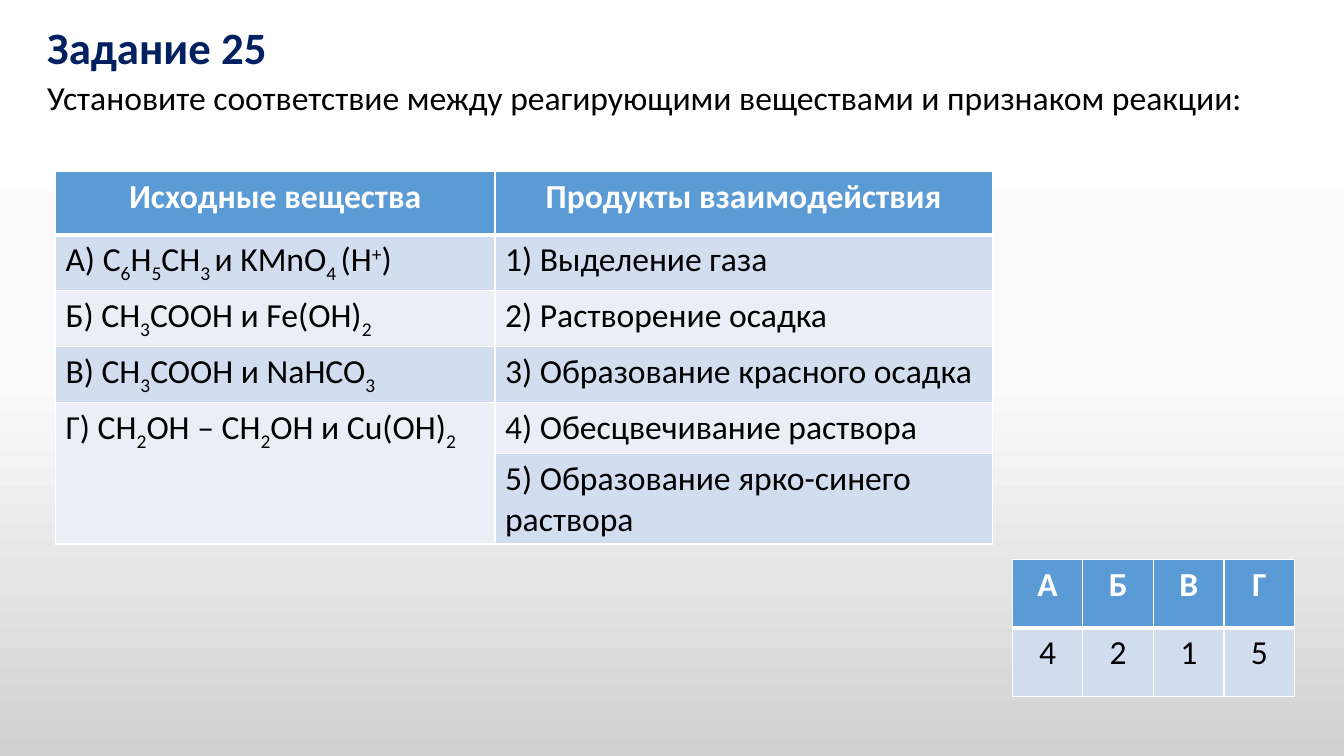
from copy import deepcopy
from dataclasses import dataclass

from lxml import etree
from pptx import Presentation
from pptx.dml.color import RGBColor
from pptx.enum.text import MSO_ANCHOR, PP_ALIGN
from pptx.oxml.ns import qn
from pptx.util import Inches, Pt

LEFT, CENTER = PP_ALIGN.LEFT, PP_ALIGN.CENTER
TOP, MIDDLE = MSO_ANCHOR.TOP, MSO_ANCHOR.MIDDLE

NAVY = RGBColor(0x00, 0x20, 0x60)
BLACK = RGBColor(0x00, 0x00, 0x00)
WHITE = RGBColor(0xFF, 0xFF, 0xFF)
HEADER_BLUE = RGBColor(0x5B, 0x9B, 0xD5)
BAND_DARK = RGBColor(0xD2, 0xDE, 0xEF)
BAND_LIGHT = RGBColor(0xEA, 0xEF, 0xF7)
BACKGROUND = [(0, WHITE), (0.5, RGBColor(0xFB, 0xFB, 0xFB)), (1, RGBColor(0xD1, 0xD1, 0xD1))]

FONT = "Calibri"
INDEX_MARK = "_"
SUBSCRIPT, SUPERSCRIPT = "-25000", "30000"


@dataclass
class Heading:
    text: str
    top: float
    width: float
    height: float
    size: int
    color: RGBColor
    bold: bool
    anchor: MSO_ANCHOR
    spacing: float


@dataclass
class Grid:
    left: float
    top: float
    widths: list[float]
    heights: list[float]
    rows: list[list[str]]
    body_align: PP_ALIGN


HEADINGS = [
    Heading("Задание 25", 0.28, 11.5, 0.43, 32, NAVY, True, MIDDLE, 0.9),
    Heading("Установите соответствие между реагирующими веществами и признаком реакции:",
            0.71, 12.48, 0.5, 24, BLACK, False, TOP, 1.0),
]

REACTIONS = Grid(
    0.55, 1.7, [4.36, 4.93], [0.63, 0.41, 0.54, 0.55, 0.46, 0.43],
    [
        ["Исходные вещества", "Продукты взаимодействия"],
        ["А) C_6_H_5_CH_3 _и KMnO_4 _(H_+_)", "1) Выделение газа"],
        ["Б) CH_3_COOH и Fe(OH)_2_", "2) Растворение осадка"],
        ["В) CH_3_COOH и NaHCO_3_", "3) Образование красного осадка"],
        ["Г) CH_2_OH – CH_2_OH и Cu(OH)_2_", "4) Обесцвечивание раствора"],
        ["", "5) Образование ярко-синего раствора"],
    ],
    LEFT,
)
ANSWERS = Grid(10.04, 5.55, [0.7] * 4, [0.68] * 2, [list("АБВГ"), list("4215")], CENTER)


def add_spans(para, text: str, size: int, color: RGBColor, bold: bool) -> None:
    for position, piece in enumerate(text.split(INDEX_MARK)):
        if not piece:
            continue
        span = para.add_run()
        span.text = piece
        span.font.name = FONT
        span.font.size = Pt(size)
        span.font.bold = bold
        span.font.color.rgb = color
        if position % 2:
            baseline = SUPERSCRIPT if piece == "+" else SUBSCRIPT
            span.font._element.set("baseline", baseline)


def add_heading(page, heading: Heading) -> None:
    box = page.shapes.add_textbox(Inches(0.37), Inches(heading.top),
                                  Inches(heading.width), Inches(heading.height))
    frame = box.text_frame
    frame.word_wrap = True
    frame.vertical_anchor = heading.anchor
    para = frame.paragraphs[0]
    para.line_spacing = heading.spacing
    add_spans(para, heading.text, heading.size, heading.color, heading.bold)


def set_borders(cell, top: int, bottom: int) -> None:
    properties = cell._tc.get_or_add_tcPr()
    sides = [("lnL", 1), ("lnR", 1), ("lnT", top), ("lnB", bottom)]
    for position, (side, points) in enumerate(sides):
        line = etree.Element(qn(f"a:{side}"), w=str(Pt(points)))
        fill = etree.SubElement(line, qn("a:solidFill"))
        etree.SubElement(fill, qn("a:srgbClr"), val=str(WHITE))
        properties.insert(position, line)


def add_grid(page, grid: Grid) -> None:
    table = page.shapes.add_table(
        len(grid.heights), len(grid.widths), Inches(grid.left), Inches(grid.top),
        Inches(sum(grid.widths)), Inches(sum(grid.heights))).table
    for column, width in zip(table.columns, grid.widths):
        column.width = Inches(width)
    for row, height in zip(table.rows, grid.heights):
        row.height = Inches(height)
    for row_index, texts in enumerate(grid.rows):
        header = row_index == 0
        band = BAND_DARK if row_index % 2 else BAND_LIGHT
        for column_index, text in enumerate(texts):
            cell = table.cell(row_index, column_index)
            cell.fill.solid()
            cell.fill.fore_color.rgb = HEADER_BLUE if header else band
            set_borders(cell, 3 if row_index == 1 else 1, 3 if header else 1)
            para = cell.text_frame.paragraphs[0]
            para.alignment = CENTER if header else grid.body_align
            add_spans(para, text, 24, WHITE if header else BLACK, header)
            if not text:
                table.cell(row_index - 1, column_index).merge(cell)


def paint_background(page) -> None:
    fill = page.background.fill
    fill.gradient()
    fill.gradient_angle = 270
    stops = page._element.find(f".//{qn('a:gsLst')}")
    stops.insert(1, deepcopy(stops[0]))
    for stop, (position, color) in zip(fill.gradient_stops, BACKGROUND):
        stop.position = position
        stop.color.rgb = color


def main() -> None:
    deck = Presentation()
    deck.slide_width, deck.slide_height = Inches(13.33), Inches(7.5)
    page = deck.slides.add_slide(deck.slide_layouts[6])
    paint_background(page)
    for heading in HEADINGS:
        add_heading(page, heading)
    for grid in (REACTIONS, ANSWERS):
        add_grid(page, grid)
    deck.save("out.pptx")


if __name__ == "__main__":
    main()
